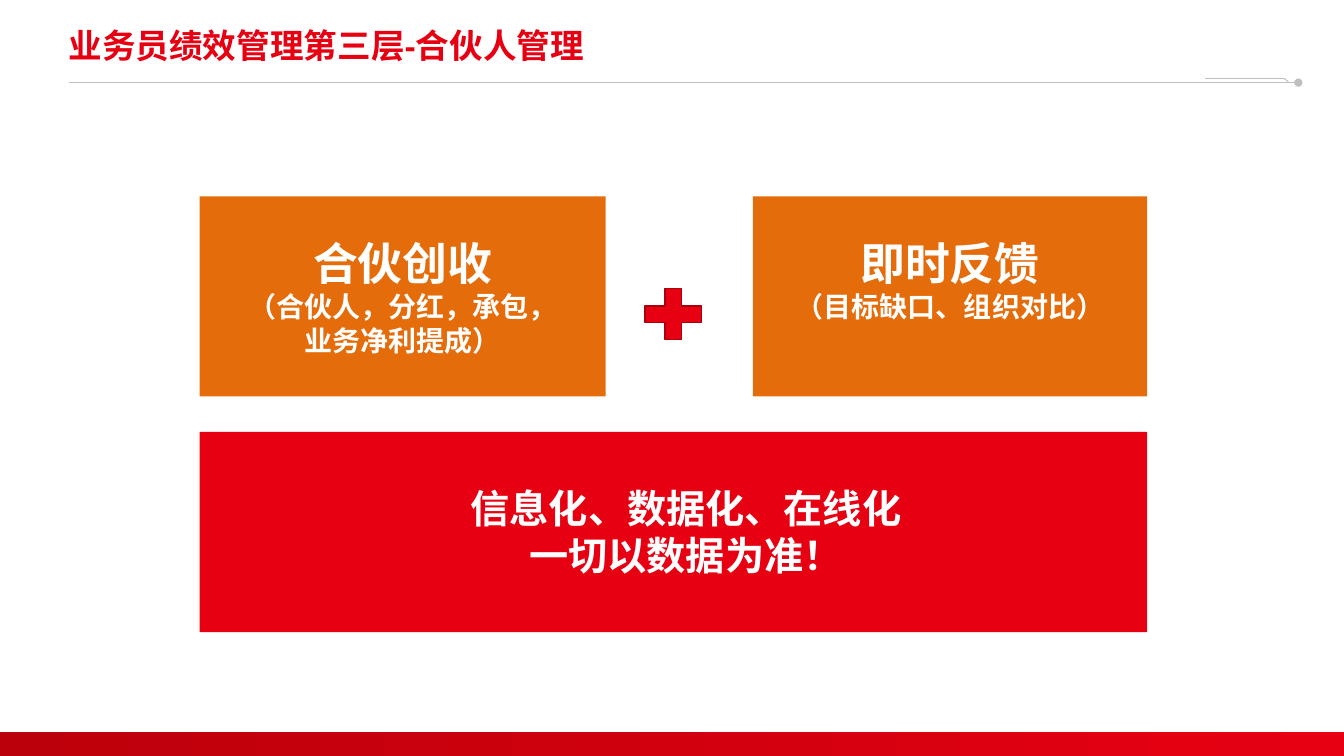
"""Build the slide on partner management for sales staff."""
from lxml.etree import SubElement
from pptx import Presentation
from pptx.dml.color import RGBColor
from pptx.enum.shapes import MSO_CONNECTOR as Connector, MSO_SHAPE as Shape
from pptx.enum.text import MSO_ANCHOR as Anchor, MSO_AUTO_SIZE as AutoSize, PP_ALIGN as Align
from pptx.oxml.ns import qn
from pptx.util import Pt

RED, ORANGE, GREY, WHITE = "E60012", "E46C0A", "BFBFBF", "FFFFFF"
CJK = "Noto Sans CJK SC"


def paint(color_format, value):
    color_format.rgb = RGBColor.from_string(value)


def write(paragraph, text, size, color, name, align):
    paragraph.alignment = align
    run = paragraph.add_run()
    run.text = text
    for key, value in {"size": Pt(size), "bold": True, "name": name}.items():
        setattr(run.font, key, value)
    paint(run.font.color, color)
    SubElement(run.font._element, qn("a:ea"), typeface=CJK)


presentation = Presentation()
presentation.slide_width, presentation.slide_height = Pt(960), Pt(540)
slide = presentation.slides.add_slide(presentation.slide_layouts[5])

title = slide.shapes.title
for key, value in {"left": 49, "top": 15.8, "width": 726, "height": 36}.items():
    setattr(title, key, Pt(value))
title_format = {"margin_left": 0, "margin_right": Pt(7.2), "margin_top": Pt(3.6),
                "margin_bottom": Pt(3.6), "word_wrap": False,
                "auto_size": AutoSize.NONE, "vertical_anchor": Anchor.MIDDLE}
for key, value in title_format.items():
    setattr(title.text_frame, key, value)
heading = title.text_frame.paragraphs[0]
heading.line_spacing = 0.9
write(heading, "业务员绩效管理第三层-合伙人管理", 24, RED, "Arial", Align.LEFT)

header_lines = [(49, 59, 927.4, 59), (861, 56, 917.3, 56), (917.3, 56, 920.2, 58.4)]
for index, ends in enumerate(header_lines):
    line = slide.shapes.add_connector(Connector.STRAIGHT, *map(Pt, ends))
    line.line.width = Pt(0.75)
    paint(line.line.color, GREY)
    if index == 0:
        SubElement(line.line._get_or_add_ln(), qn("a:tailEnd"), type="oval")
    SubElement(line._element.spPr, qn("a:effectLst"))

blocks = [
    (Shape.RECTANGLE, 0, 522.7, 960, 17.3, None, None),
    (Shape.RECTANGLE, 142.6, 308.5, 676.8, 143, RED, None),
    (Shape.RECTANGLE, 142.6, 140.2, 290, 143, ORANGE, None),
    (Shape.RECTANGLE, 537.8, 140.2, 281.6, 143, ORANGE, None),
    (Shape.MATH_PLUS, 453.6, 199.6, 54.7, 49.7, RED, "AA000D"),
]
for kind, left, top, width, height, fill, outline in blocks:
    shape = slide.shapes.add_shape(kind, Pt(left), Pt(top), Pt(width), Pt(height))
    shape.shadow.inherit = False
    if fill:
        shape.fill.solid()
        paint(shape.fill.fore_color, fill)
    else:
        shape.fill.gradient()
        shape.fill.gradient_angle = 0
        for stop, color in zip(shape.fill.gradient_stops, ("BC000B", RED)):
            paint(stop.color, color)
    if outline:
        shape.line.width = Pt(1)
        paint(shape.line.color, outline)
    else:
        shape.line.fill.background()

captions = [
    (153.4, 164.9, 268.6, 94.3, True,
     [("合伙创收", 32), ("（合伙人，分红，承包，", 20), ("业务净利提成）", 20)]),
    (555.1, 164.9, 247, 70.6, True, [("即时反馈", 32), ("（目标缺口、组织对比）", 20)]),
    (328.3, 342.7, 323.3, 74.9, False,
     [("信息化、数据化、在线化", 28), ("一切以数据为准！", 28)]),
]
for left, top, width, height, wrap, rows in captions:
    box = slide.shapes.add_textbox(Pt(left), Pt(top), Pt(width), Pt(height))
    frame = box.text_frame
    frame.word_wrap = wrap
    frame.auto_size = AutoSize.SHAPE_TO_FIT_TEXT
    for index, (text, size) in enumerate(rows):
        paragraph = frame.add_paragraph() if index else frame.paragraphs[0]
        write(paragraph, text, size, WHITE, CJK, Align.CENTER)

presentation.save("out.pptx")
